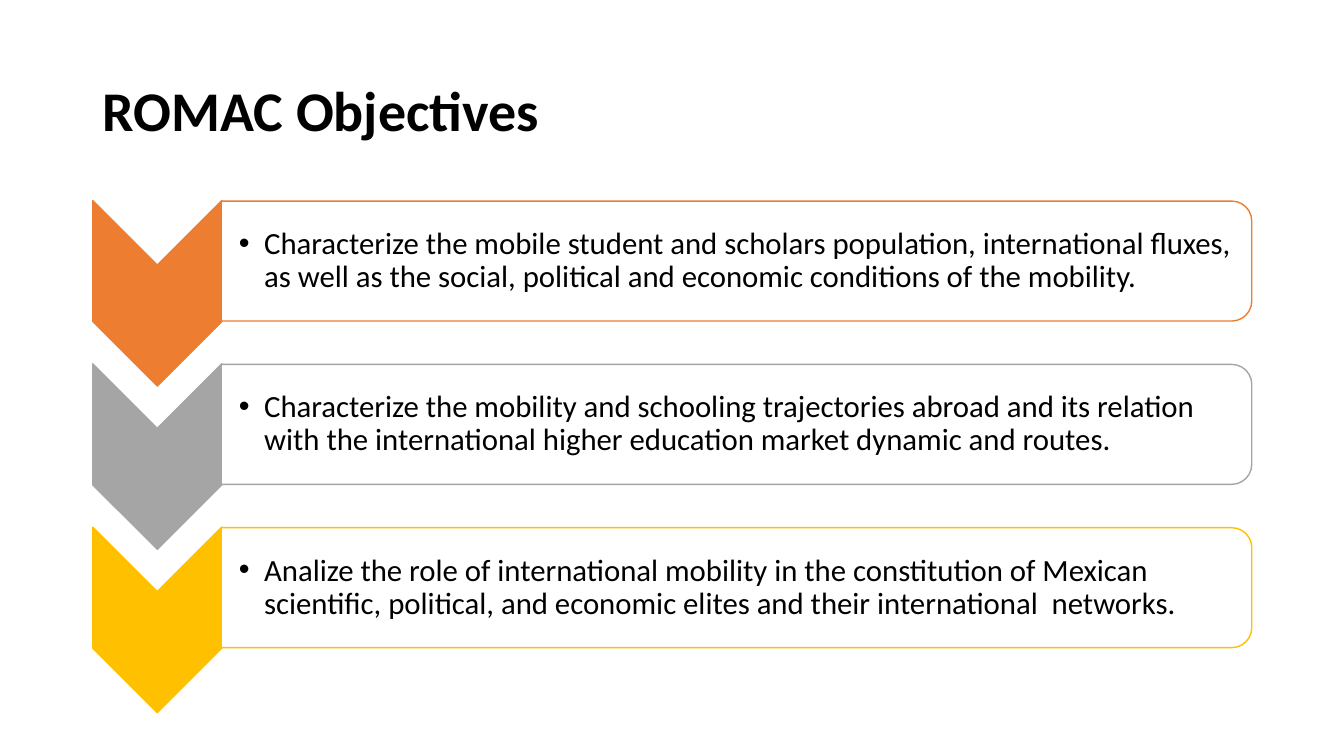
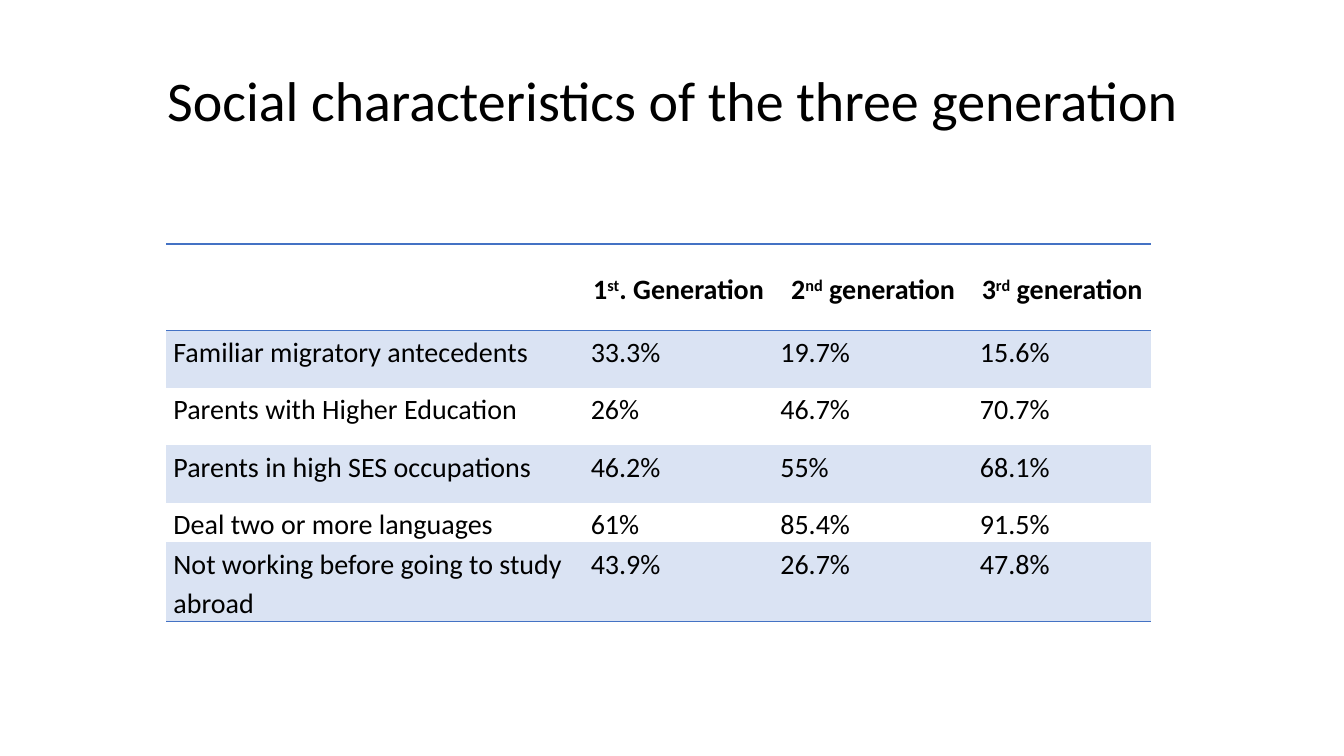
from lxml import etree
from pptx import Presentation
from pptx.dml.color import RGBColor
from pptx.enum.shapes import MSO_SHAPE
from pptx.enum.text import MSO_ANCHOR, PP_ALIGN
from pptx.oxml.ns import qn
from pptx.util import Inches, Pt

CHEVRON = MSO_SHAPE.CHEVRON
PANEL = MSO_SHAPE.ROUND_2_SAME_RECTANGLE
MIDDLE, TOP = MSO_ANCHOR.MIDDLE, MSO_ANCHOR.TOP
LEFT, CENTER, JUSTIFY = PP_ALIGN.LEFT, PP_ALIGN.CENTER, PP_ALIGN.JUSTIFY

BLACK = RGBColor(0x00, 0x00, 0x00)
WHITE = RGBColor(0xFF, 0xFF, 0xFF)
ORANGE = RGBColor(0xED, 0x7D, 0x31)
GRAY = RGBColor(0xA5, 0xA5, 0xA5)
GOLD = RGBColor(0xFF, 0xC0, 0x00)
BLUE = RGBColor(0x44, 0x72, 0xC4)
PALE = RGBColor(0xDA, 0xE3, 0xF3)

FONT = "Calibri"
TITLE_SIZE, GOAL_SIZE, CELL_SIZE = Pt(40), Pt(22), Pt(20)
GOAL_STEP = 1.62
NO_GRID = "{2D5ABB26-0587-4C30-8999-92F81FD0307C}"

GOALS = [
    (ORANGE, "Characterize the mobile student and scholars population, "
     "international fluxes, as well as the social, political and economic "
     "conditions of the mobility."),
    (GRAY, "Characterize the mobility and schooling trajectories abroad and "
     "its relation with the international higher education market dynamic "
     "and routes."),
    (GOLD, "Analize the role of international mobility in the constitution "
     "of Mexican scientific, political, and economic elites and their "
     "international  networks."),
]
HEADS = [("1", "st", ". Generation"), ("2", "nd", " generation"),
         ("3", "rd", " generation")]
ROWS = [
    ("Familiar migratory antecedents", "33.3%", "19.7%", "15.6%"),
    ("Parents with Higher Education", "26%", "46.7%", "70.7%"),
    ("Parents in high SES occupations", "46.2%", "55%", "68.1%"),
    ("Deal two or more languages", "61%", "85.4%", "91.5%"),
    ("Not working before going to study abroad", "43.9%", "26.7%", "47.8%"),
]
WIDTHS = [4.14, 1.88, 1.98, 1.77]
HEIGHTS = [0.86, 0.57, 0.57, 0.57, 0.39, 0.78]


def apply(item, **values):
    """Set each named attribute on an object."""
    for name, value in values.items():
        setattr(item, name, value)


def box(x, y, w, h):
    """Turn inches into a left, top, width, height tuple."""
    return tuple(Inches(n) for n in (x, y, w, h))


def add_run(para, text, size, bold=False, raised=False):
    """Add a black run, optionally bold or superscript."""
    run = para.add_run()
    run.text = text
    apply(run.font, name=FONT, size=size, bold=bold)
    run.font.color.rgb = BLACK
    if raised:
        run.font._element.set("baseline", "30000")


def add_slide(deck, title, top, align, bold=False):
    """Add a title-only slide with its title set."""
    slide = deck.slides.add_slide(deck.slide_layouts[5])
    shape = slide.shapes.title
    left, top, width, height = box(0.92, top, 11.5, 1.45)
    apply(shape, left=left, top=top, width=width, height=height)
    apply(shape.text_frame, vertical_anchor=MIDDLE, word_wrap=True)
    para = shape.text_frame.paragraphs[0]
    apply(para, alignment=align, line_spacing=0.9)
    add_run(para, title, TITLE_SIZE, bold)
    return slide


def add_turned(slide, kind, frame, fill, line):
    """Add a preset shape turned a quarter clockwise."""
    shape = slide.shapes.add_shape(kind, *box(*frame))
    shape.rotation = 90
    shape.shadow.inherit = False
    shape.fill.solid()
    shape.fill.fore_color.rgb = fill
    shape.line.color.rgb = line
    shape.line.width = Pt(1)


def add_bullet(para):
    """Give a paragraph a hanging round bullet."""
    props = para._p.get_or_add_pPr()
    props.set("marL", str(Inches(0.25)))
    props.set("indent", str(-Inches(0.25)))
    etree.SubElement(props, qn("a:buFont"), typeface="Arial")
    etree.SubElement(props, qn("a:buChar"), char="•")


def add_goal(slide, shift, color, text):
    """Add one chevron with its outlined panel and bullet text."""
    add_turned(slide, CHEVRON, (0.64, 2.27 + shift, 1.84, 1.28), color, color)
    add_turned(slide, PANEL, (6.71, -2.52 + shift, 1.19, 10.22), WHITE, color)
    frame = slide.shapes.add_textbox(*box(2.2, 2.05 + shift, 10.16, 1.08)).text_frame
    edge = Inches(0.02)
    apply(frame, word_wrap=True, vertical_anchor=MIDDLE, margin_left=Inches(0.17),
          margin_right=edge, margin_top=edge, margin_bottom=edge)
    para = frame.paragraphs[0]
    para.line_spacing = 0.9
    add_bullet(para)
    add_run(para, text, GOAL_SIZE)


def add_edge(cell, side):
    """Draw a thin blue border on one side of a cell."""
    props = cell._tc.get_or_add_tcPr()
    line = etree.Element(qn("a:" + side), w=str(Pt(1)))
    fill = etree.SubElement(line, qn("a:solidFill"))
    etree.SubElement(fill, qn("a:srgbClr"), val=str(BLUE))
    spot = len(props.findall(qn("a:lnT")))
    props.insert(spot, line)


def fill_cell(cell, parts, align, anchor, bold=False):
    """Write text parts to a cell, raising the second one."""
    side = Inches(0.07)
    apply(cell, margin_left=side, margin_right=side, margin_top=0,
          margin_bottom=0, vertical_anchor=anchor)
    para = cell.text_frame.paragraphs[0]
    apply(para, alignment=align, line_spacing=1.15)
    for i, part in enumerate(parts):
        add_run(para, part, CELL_SIZE, bold, i == 1)


def add_grid(slide):
    """Add the table of traits by generation."""
    frame = box(1.65, 2.42, sum(WIDTHS), sum(HEIGHTS))
    table = slide.shapes.add_table(len(HEIGHTS), len(WIDTHS), *frame).table
    table._tbl.tblPr.find(qn("a:tableStyleId")).text = NO_GRID
    apply(table, first_row=True, horz_banding=False)
    for col, width in zip(table.columns, WIDTHS):
        col.width = Inches(width)
    for row, height in zip(table.rows, HEIGHTS):
        row.height = Inches(height)
    for c, parts in enumerate(HEADS, 1):
        fill_cell(table.cell(0, c), parts, CENTER, MIDDLE, True)
    for r, row in enumerate(ROWS, 1):
        for c, text in enumerate(row):
            fill_cell(table.cell(r, c), [text], JUSTIFY if c else LEFT, TOP)
    for r in range(len(HEIGHTS)):
        for c in range(len(WIDTHS)):
            cell = table.cell(r, c)
            if r % 2:
                cell.fill.solid()
                cell.fill.fore_color.rgb = PALE
            else:
                cell.fill.background()
            if r == 0:
                add_edge(cell, "lnT")
            if r in (0, len(ROWS)):
                add_edge(cell, "lnB")


def main():
    """Build and save both slides."""
    deck = Presentation()
    apply(deck, slide_width=Inches(13.33), slide_height=Inches(7.5))
    slide = add_slide(deck, "ROMAC Objectives", 0.4, LEFT, True)
    for i, (color, text) in enumerate(GOALS):
        add_goal(slide, i * GOAL_STEP, color, text)
    slide = add_slide(deck, "Social characteristics of the three generation",
                      0.3, CENTER)
    add_grid(slide)
    deck.save("out.pptx")


if __name__ == "__main__":
    main()
